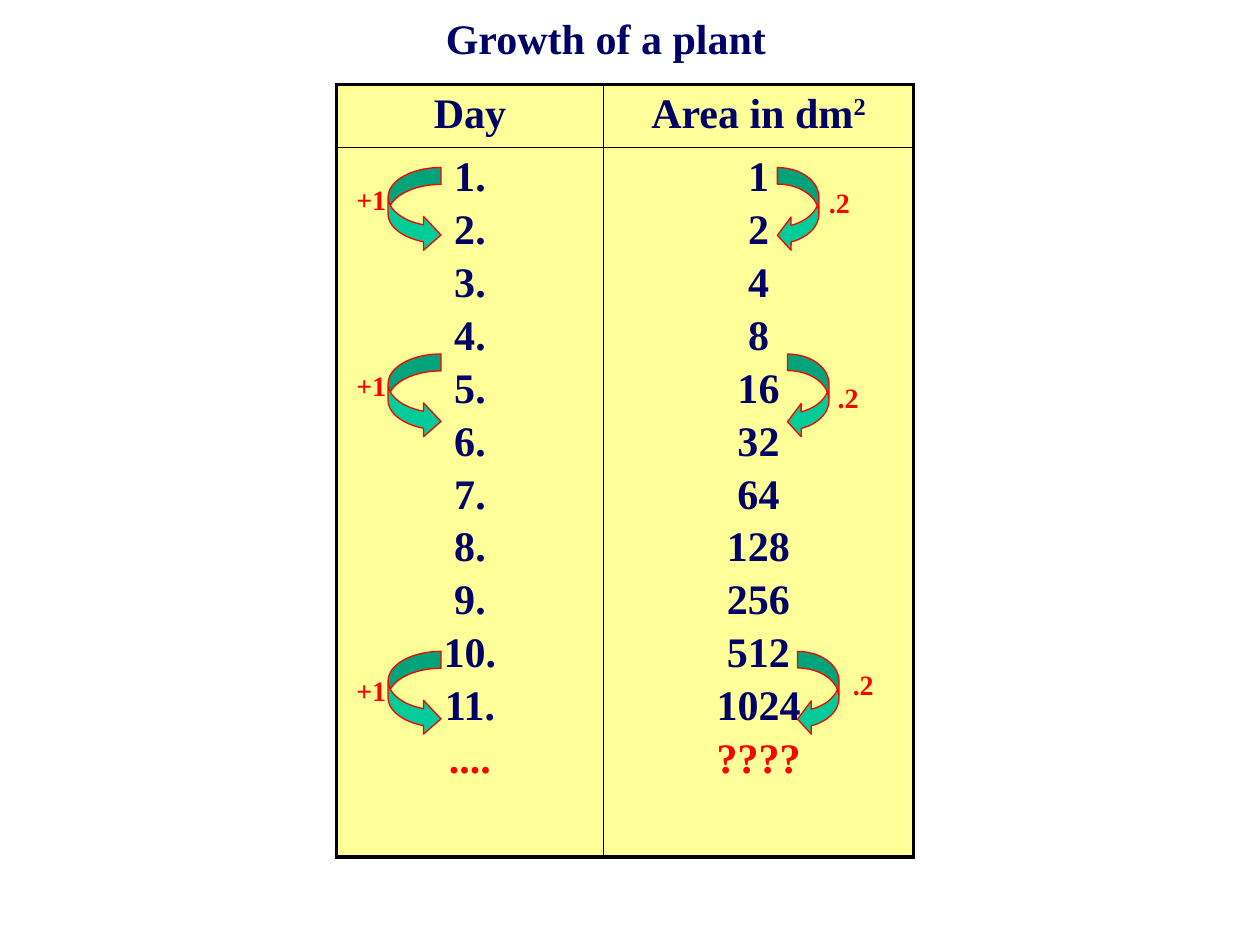
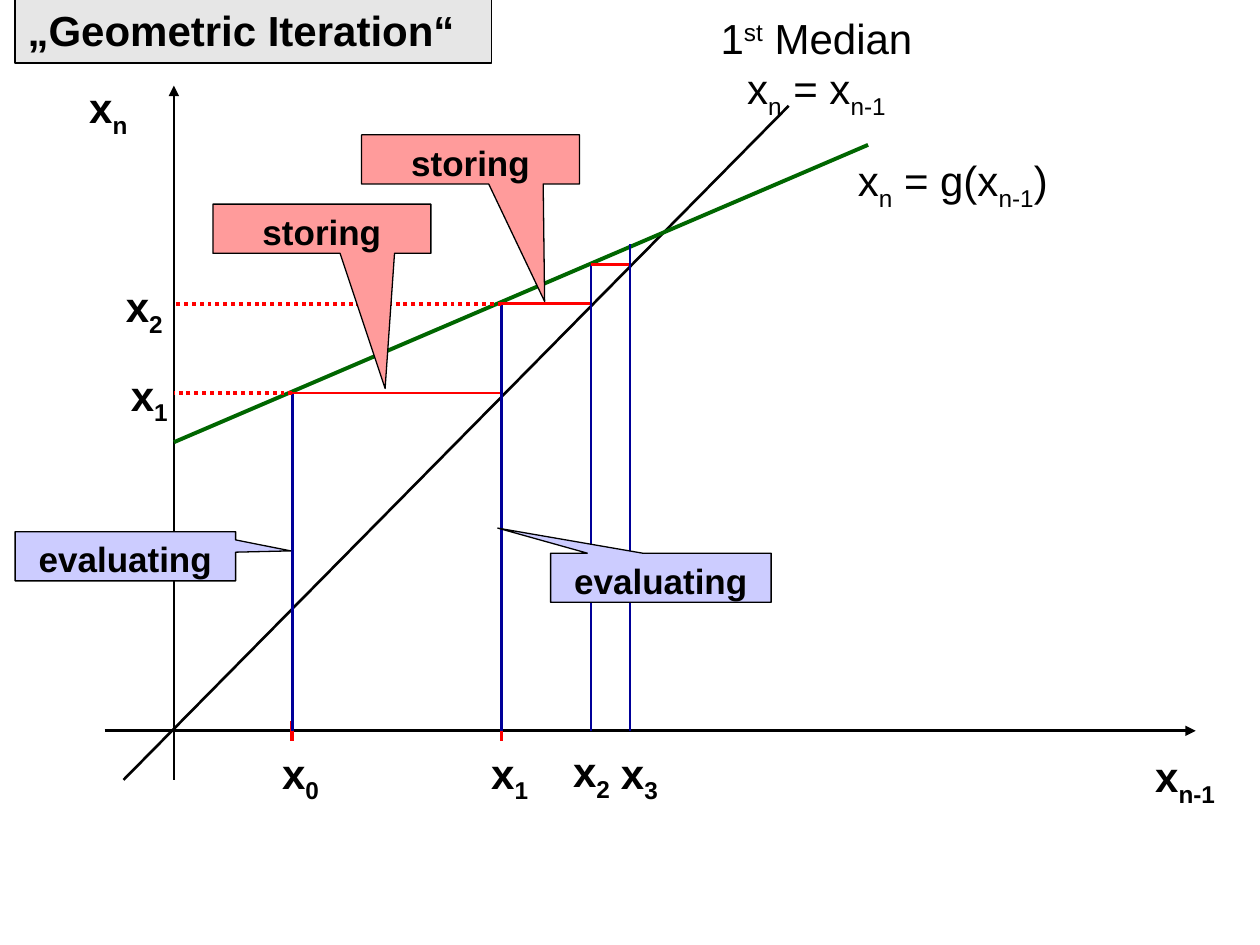
from dataclasses import dataclass

from lxml.etree import SubElement
from pptx import Presentation
from pptx.dml.color import RGBColor
from pptx.enum.dml import MSO_LINE
from pptx.enum.shapes import MSO_CONNECTOR, MSO_SHAPE
from pptx.enum.text import MSO_ANCHOR, PP_ALIGN
from pptx.oxml.ns import qn
from pptx.util import Inches, Pt


@dataclass(frozen=True)
class Theme:
    serif: str = "Times New Roman"
    sans: str = "Arial"
    black: str = "000000"
    navy: str = "000066"
    red: str = "FF0000"
    blue: str = "000099"
    green: str = "006600"
    teal: str = "00CC99"
    yellow: str = "FFFF99"
    lilac: str = "CCCCFF"
    salmon: str = "FF9B9B"
    gray: str = "E6E6E6"
    large: int = 24
    medium: int = 20
    small: int = 16
    hairline: float = 0.75
    thin: float = 1
    normal: float = 1.5
    heavy: float = 2.25


THEME = Theme()

# Content. In a line of text, "|" parts the runs; a run led by "_" is lowered, by "^" raised.
GROWTH_TITLE = ("Growth of a plant", 3.44, 0.05, 2.77, 0.51)
GROWTH_HEADS = ["Day", "Area in dm|^2"]
DAYS = [f"{day}." for day in range(1, 12)] + ["...."]
AREAS = [str(2 ** step) for step in range(11)] + ["????"]
TABLE_PLACE = (2.67, 0.67, 4.58, 6.13)
COLUMN_WIDTHS = [2.12, 2.46]
ROW_HEIGHTS = [0.5, 5.63]

# One step: arrow top, top of "+1", left of right arrow, left and top of ".2"
GROWTH_STEPS = [
    (1.33, 1.4, 6.17, 6.48, 1.42),
    (2.81, 2.88, 6.25, 6.55, 2.97),
    (5.17, 5.3, 6.33, 6.67, 5.25),
]

ITERATION_TITLE = ("„Geometric Iteration“", 0.12, -0.01, 3.78, 0.51)
AXIS_X, AXIS_Y, TICK_END = 1.38, 5.8, 5.88
AXES = [((0.83, AXIS_Y), (9.49, AXIS_Y)), ((AXIS_X, 6.19), (AXIS_X, 0.68))]
MEDIAN = ((0.98, 6.19), (6.26, 0.84))
FUNCTION_LINE = ((AXIS_X, 3.51), (6.89, 1.15))
ITERATES = [(2.32, 3.12), (3.98, 2.41), (4.69, 2.1), (5.0, 1.94)]
STORED_COUNT = 2

BOLD_LABELS = [
    ("x|_n-1", 9.07, 5.91, 0.73), ("x|_n", 0.61, 0.6, 0.53),
    ("x|_0", 2.14, 5.88, 0.51), ("x|_1", 3.8, 5.88, 0.51),
    ("x|_2", 4.45, 5.87, 0.52), ("x|_3", 4.83, 5.88, 0.51),
    ("x|_1", 0.94, 2.88, 0.51), ("x|_2", 0.9, 2.18, 0.51),
]
MEDIAN_LABEL = ["1|^st| Median", "x|_n| = x|_n-1"]
FUNCTION_LABEL = ["x|_n| = g(x|_n-1|)"]
CALLOUTS = [
    ("evaluating", THEME.lilac, (0.12, 4.22, 1.75, 0.39), (0.75, -0.11)),
    ("storing", THEME.salmon, (1.69, 1.62, 1.73, 0.39), (0.29, 3.25)),
    ("evaluating", THEME.lilac, (4.37, 4.39, 1.75, 0.39), (-0.74, -1.01)),
    ("storing", THEME.salmon, (2.87, 1.07, 1.73, 0.39), (0.34, 2.89)),
]


# Shared drawing helpers
def rgb(color):
    return RGBColor.from_string(color)


def inches(place):
    return [Inches(length) for length in place]


def write(frame, lines, font, size, color, bold=True, align=PP_ALIGN.LEFT, gap=0):
    for index, line in enumerate(lines):
        para = frame.add_paragraph() if index else frame.paragraphs[0]
        para.alignment = align
        para.space_before = Pt(gap if index else 0)
        para.font.name, para.font.size, para.font.bold = font, Pt(size), bold
        para.font.color.rgb = rgb(color)
        for part in line.split("|"):
            span = para.add_run()
            span.text = part.lstrip("_^")
            if part[0] in "_^":
                shift = "-25000" if part[0] == "_" else "30000"
                span._r.get_or_add_rPr().set("baseline", shift)


def add_label(page, lines, place, **look):
    box = page.shapes.add_textbox(*inches(place))
    box.text_frame.word_wrap = False
    write(box.text_frame, lines, **look)


def add_block(page, preset, place, fill, line, adjustments=()):
    block = page.shapes.add_shape(preset, *inches(place))
    block.shadow.inherit = False
    block.fill.solid()
    block.fill.fore_color.rgb = rgb(fill)
    block.line.color.rgb = rgb(line)
    block.line.width = Pt(THEME.hairline)
    for index, value in enumerate(adjustments):
        block.adjustments[index] = value
    block.text_frame.vertical_anchor = MSO_ANCHOR.TOP
    return block


def add_line(page, start, end, color, width=THEME.normal, dotted=False, arrow=False):
    line = page.shapes.add_connector(MSO_CONNECTOR.STRAIGHT, *inches(start + end))
    line.line.color.rgb = rgb(color)
    line.line.width = Pt(width)
    if dotted:
        line.line.dash_style = MSO_LINE.ROUND_DOT
    properties = line._element.spPr
    if arrow:
        SubElement(properties.find(qn("a:ln")), qn("a:tailEnd"), type="triangle")
    SubElement(properties, qn("a:effectLst"))


def set_borders(cell, row, column):
    edges = {"L": column == 0, "R": column == 1, "T": row == 0, "B": row == 1}
    properties = cell._tc.get_or_add_tcPr()
    for side, outer in edges.items():
        width = Pt(THEME.heavy if outer else THEME.thin)
        border = SubElement(properties, qn(f"a:ln{side}"), w=str(width))
        fill = SubElement(border, qn("a:solidFill"))
        SubElement(fill, qn("a:srgbClr"), val=THEME.black)


# Slide 1: the growth table and its step arrows
def build_growth(page):
    table = page.shapes.add_table(2, 2, *inches(TABLE_PLACE)).table
    table.first_row = table.horz_banding = False
    for column, width in zip(table.columns, COLUMN_WIDTHS):
        column.width = Inches(width)
    for row, height in zip(table.rows, ROW_HEIGHTS):
        row.height = Inches(height)
    for column, (head, values) in enumerate(zip(GROWTH_HEADS, [DAYS, AREAS])):
        for row, lines in enumerate([[head], values]):
            cell = table.cell(row, column)
            set_borders(cell, row, column)
            cell.fill.solid()
            cell.fill.fore_color.rgb = rgb(THEME.yellow)
            write(cell.text_frame, lines, THEME.serif, THEME.large, THEME.navy,
                  align=PP_ALIGN.CENTER, gap=3.75)
        cell.text_frame.paragraphs[-1].font.color.rgb = rgb(THEME.red)

    step_look = dict(font=THEME.serif, size=THEME.small, color=THEME.red)
    for top, plus_top, arrow_left, times_left, times_top in GROWTH_STEPS:
        add_block(page, MSO_SHAPE.CURVED_RIGHT_ARROW, (3.08, top, 0.42, 0.67),
                  THEME.teal, THEME.red, (0.32, 0.64, 0.33))
        add_block(page, MSO_SHAPE.CURVED_LEFT_ARROW, (arrow_left, top, 0.33, 0.67),
                  THEME.teal, THEME.red, (0.4, 0.8, 0.33))
        add_label(page, ["+1"], (2.73, plus_top, 0.44, 0.37), **step_look)
        add_label(page, [".2"], (times_left, times_top, 0.37, 0.37), **step_look)

    title, *place = GROWTH_TITLE
    add_label(page, [title], place, font=THEME.serif, size=THEME.large, color=THEME.navy)


# Slide 2: the iteration staircase between the median and the function
def build_iteration(page):
    for start, end in AXES:
        add_line(page, start, end, THEME.black, arrow=True)
    add_line(page, *MEDIAN, THEME.black)
    add_line(page, *FUNCTION_LINE, THEME.green, THEME.heavy)

    first_x = ITERATES[0][0]
    add_line(page, (first_x, 5.72), (first_x, TICK_END), THEME.red, THEME.heavy)
    for index, (x, y) in enumerate(ITERATES):
        if index:
            previous_y = ITERATES[index - 1][1]
            foot = TICK_END if index == 1 else AXIS_Y
            add_line(page, (x, previous_y), (x, foot), THEME.red)
        add_line(page, (x, AXIS_Y), (x, y), THEME.blue)
        if index < STORED_COUNT:
            add_line(page, (x, y), (AXIS_X, y), THEME.red, THEME.heavy, dotted=True)
        if index + 1 < len(ITERATES):
            add_line(page, (x, y), (ITERATES[index + 1][0], y), THEME.red)

    look = dict(font=THEME.sans, size=THEME.large, color=THEME.black)
    for text, left, top, width in BOLD_LABELS:
        add_label(page, [text], (left, top, width, 0.51), **look)
    add_label(page, MEDIAN_LABEL, (5.6, 0.05, 1.76, 0.91), bold=False,
              align=PP_ALIGN.CENTER, **look)
    add_label(page, FUNCTION_LABEL, (6.71, 1.18, 1.78, 0.51), bold=False, **look)

    for text, fill, place, pointer in CALLOUTS:
        callout = add_block(page, MSO_SHAPE.RECTANGULAR_CALLOUT, place, fill,
                            THEME.black, pointer)
        write(callout.text_frame, [text], THEME.sans, THEME.medium, THEME.black,
              align=PP_ALIGN.CENTER)

    title, *place = ITERATION_TITLE
    banner = add_block(page, MSO_SHAPE.RECTANGLE, place, THEME.gray, THEME.black)
    write(banner.text_frame, [title], **look)


def main():
    deck = Presentation()
    deck.slide_width, deck.slide_height = Inches(10), Inches(7.5)
    for build in (build_growth, build_iteration):
        build(deck.slides.add_slide(deck.slide_layouts[6]))
    deck.save("out.pptx")


if __name__ == "__main__":
    main()
